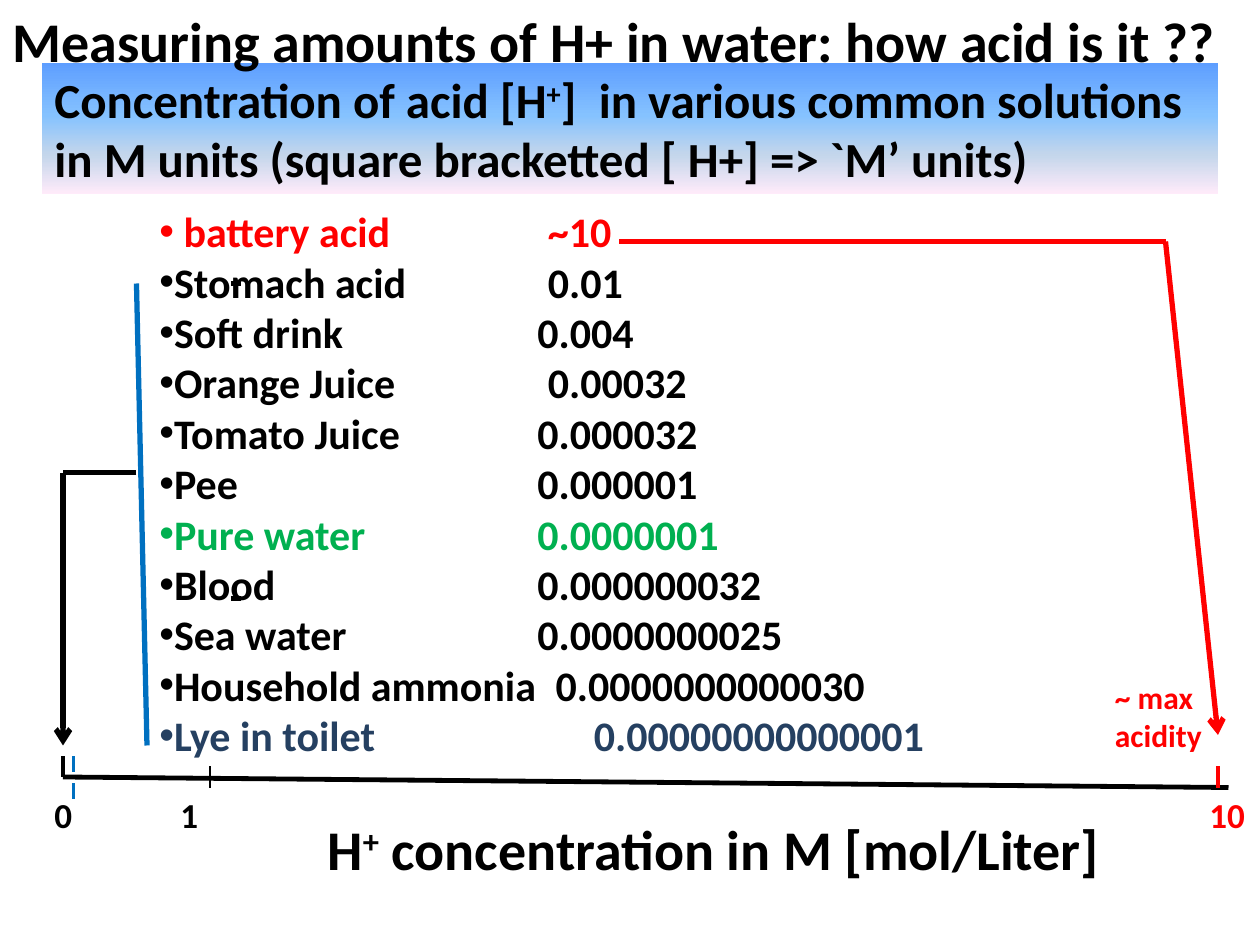
from lxml import etree
from pptx import Presentation
from pptx import util as u
from pptx.dml.color import RGBColor
from pptx.enum import dml, shapes, text
from pptx.oxml.ns import qn

BLACK = RGBColor(0x00, 0x00, 0x00)
RED = RGBColor(0xFF, 0x00, 0x00)
GREEN = RGBColor(0x00, 0xB0, 0x50)
BLUE = RGBColor(0x00, 0x70, 0xC0)
NAVY = RGBColor(0x25, 0x40, 0x61)
BANNER_STOPS = [
    (0, RGBColor(0x5E, 0x9E, 0xFF)),
    (40, RGBColor(0x85, 0xC2, 0xFF)),
    (70, RGBColor(0xC4, 0xD6, 0xEB)),
    (100, RGBColor(0xFF, 0xEB, 0xFA)),
]
PX = 9525
VALUE_TAB = 288
SOLUTIONS = [
    (" battery acid", "~10", RED, VALUE_TAB + 8),
    ("Stomach acid", "0.01", BLACK, VALUE_TAB + 8),
    ("Soft drink", "0.004", BLACK, VALUE_TAB),
    ("Orange Juice", "0.00032", BLACK, VALUE_TAB + 8),
    ("Tomato Juice", "0.000032", BLACK, VALUE_TAB),
    ("Pee", "0.000001", BLACK, VALUE_TAB),
    ("Pure water", "0.0000001", GREEN, VALUE_TAB),
    ("Blood", "0.000000032", BLACK, VALUE_TAB),
    ("Sea water", "0.0000000025", BLACK, VALUE_TAB),
    ("Household ammonia", "0.0000000000030", BLACK, VALUE_TAB + 14),
    ("Lye in toilet", "0.00000000000001", NAVY, VALUE_TAB + 43),
]


def write(paragraph, content, size=20, color=BLACK, bullet=None, tab=None):
    """Fill a paragraph with bold text, raising the parts between ^ marks."""
    paragraph.alignment = text.PP_ALIGN.LEFT
    properties = paragraph._p.get_or_add_pPr()
    if bullet:
        etree.SubElement(properties, qn("a:buFont"), typeface="Arial")
        etree.SubElement(properties, qn("a:buChar"), char=bullet)
    if tab:
        tabs = etree.SubElement(properties, qn("a:tabLst"))
        etree.SubElement(tabs, qn("a:tab"), pos=str(tab * PX), algn="l")
    for index, part in enumerate(content.split("^")):
        run = paragraph.add_run()
        run.text = part
        run.font.name = "Calibri"
        run.font.size = u.Pt(size)
        run.font.bold = True
        run.font.color.rgb = color
        if index % 2:
            run.font._element.set("baseline", "30000")


class Painter:
    def __init__(self, slide):
        self.slide = slide

    def prepare(self, shape):
        frame = shape.text_frame
        frame.word_wrap = True
        frame.auto_size = text.MSO_AUTO_SIZE.SHAPE_TO_FIT_TEXT
        return frame

    def label(self, box, content=None, **style):
        frame = self.prepare(self.slide.shapes.add_textbox(*(v * PX for v in box)))
        if content:
            write(frame.paragraphs[0], content, **style)
        return frame

    def banner(self, box, content, stops, **style):
        panel = self.slide.shapes.add_shape(
            shapes.MSO_SHAPE.RECTANGLE, *(v * PX for v in box))
        panel.shadow.inherit = False
        panel.line.fill.background()
        panel.fill.gradient()
        panel.fill.gradient_angle = 270
        stop_list = panel._element.spPr.find(".//" + qn("a:gsLst"))
        stop_list.clear()
        for position, color in stops:
            stop = etree.SubElement(stop_list, qn("a:gs"), pos=str(position * 1000))
            etree.SubElement(stop, qn("a:srgbClr"), val=str(color))
        write(self.prepare(panel).paragraphs[0], content, **style)

    def line(self, start, end, color=BLACK, width=3, dash=None, arrow=False):
        connector = self.slide.shapes.add_connector(
            shapes.MSO_CONNECTOR.STRAIGHT, *(v * PX for v in start + end))
        connector.line.color.rgb = color
        connector.line.width = u.Pt(width)
        if dash:
            connector.line.dash_style = dash
        if arrow:
            etree.SubElement(connector.line._get_or_add_ln(), qn("a:tailEnd"), type="arrow")
        etree.SubElement(connector._element.spPr, qn("a:effectLst"))

    def bullets(self, box, rows):
        frame = self.label(box)
        for index, (name, value, color, tab) in enumerate(rows):
            paragraph = frame.add_paragraph() if index else frame.paragraphs[0]
            write(paragraph, f"{name}\t{value}", size=24, color=color, bullet="•", tab=tab)


def main():
    deck = Presentation()
    deck.slide_width, deck.slide_height = 960 * PX, 720 * PX
    painter = Painter(deck.slides.add_slide(deck.slide_layouts[6]))

    painter.line((48, 592), (936, 600), width=2.75)
    painter.banner(
        (32, 48, 896, 100),
        "Concentration of acid [H^+^]  in various common solutions "
        "in M units (square bracketted [ H+] => `M’ units)",
        BANNER_STOPS, size=28)
    painter.bullets((112, 152, 848, 436), SOLUTIONS)

    painter.line((928, 600), (928, 584), RED, 2.5)
    painter.label((912, 600, 48, 42), "10", color=RED)
    painter.line((48, 576), (48, 592), width=2.5)
    painter.label((32, 600, 224, 42), "0\t1", tab=96)
    painter.line((160, 584), (160, 600), width=1.25)

    painter.line((104, 216), (112, 568), BLUE)
    for tick_y in (216, 456):
        painter.line((176, tick_y), (184, tick_y))
    painter.line((56, 576), (56, 616), BLUE, 2.25, dash=dml.MSO_LINE.DASH)
    painter.line((104, 360), (48, 360), width=2.5)
    painter.line((48, 360), (48, 568), arrow=True)

    painter.label((840, 512, 112, 68), "~ max acidity", size=18, color=RED)
    painter.label((0, 0, 936, 61),
                  "Measuring amounts of H+ in water: how acid is it ??", size=32)
    painter.label((240, 616, 656, 61), "H^+^ concentration in M [mol/Liter]", size=32)
    painter.line((472, 184), (888, 184), RED, 2.75)
    painter.line((888, 184), (928, 560), RED, arrow=True)

    deck.save("out.pptx")


if __name__ == "__main__":
    main()
